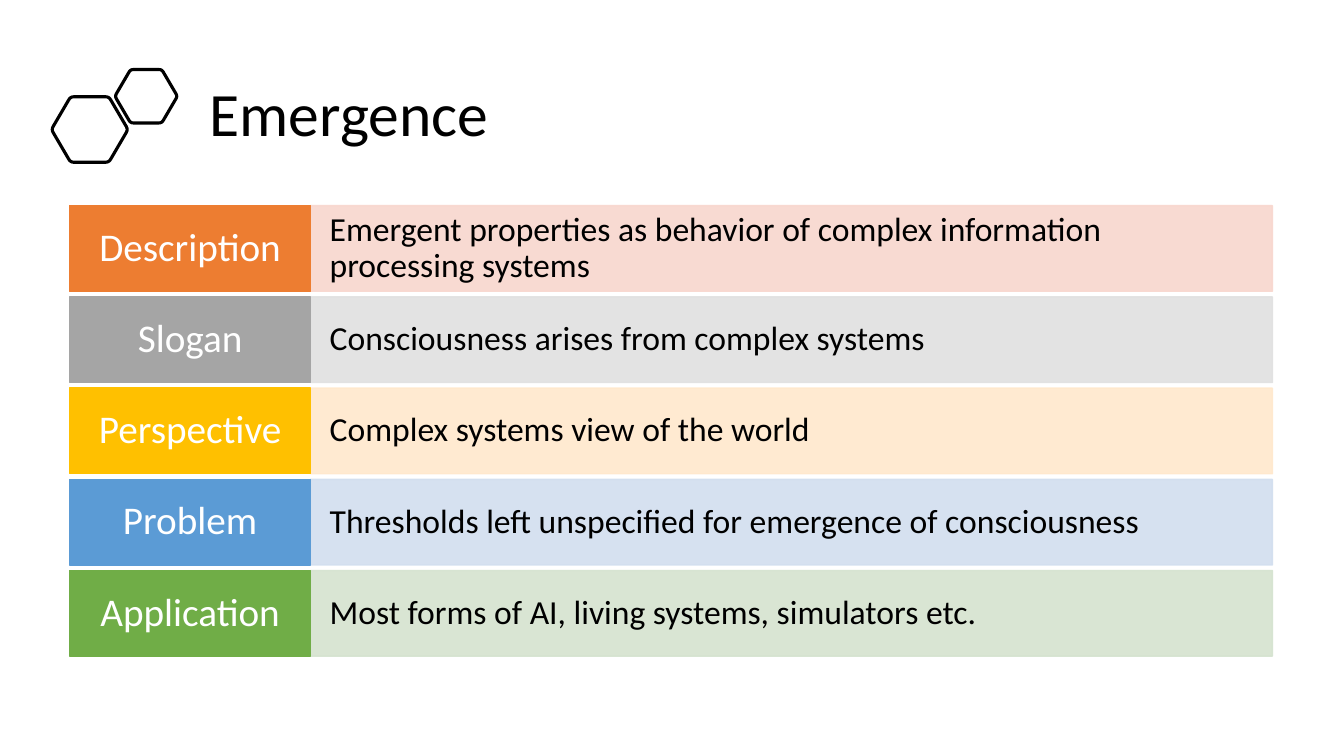
import lxml.etree
import pptx
import pptx.dml.color
import pptx.enum.shapes
import pptx.enum.text
import pptx.oxml.ns
import pptx.util

Inches = pptx.util.Inches
FONT = "Calibri"
CORNER_SHARE = 0.09
CURVE_STEPS = 4
LABEL_WIDTH = 2.39
ROW_HEIGHT = 0.85

ASPECTS = [
    ("Description",
     "Emergent properties as behavior of complex information processing systems",
     "ED7D31", "F8D7CE"),
    ("Slogan", "Consciousness arises from complex systems", "A5A5A5", "E1E1E1"),
    ("Perspective", "Complex systems view of the world", "FFC000", "FFE8CC"),
    ("Problem", "Thresholds left unspecified for emergence of consciousness",
     "5B9BD5", "D2DEEF"),
    ("Application", "Most forms of AI, living systems, simulators etc.",
     "70AD47", "D5E3CF"),
]


def rgb(hex_color):
    return pptx.dml.color.RGBColor.from_string(hex_color)


def set_opacity(shape, percent):
    """Give every solid colour of the shape's fill and line this opacity."""
    tag = pptx.oxml.ns.qn("a:srgbClr")
    for color in shape.fill._xPr.iter(tag):
        alpha = lxml.etree.SubElement(color, pptx.oxml.ns.qn("a:alpha"))
        alpha.set("val", str(percent * 1000))


def write_text(shape, text, size, color, align, side_inset):
    frame = shape.text_frame
    frame.word_wrap = True
    frame.auto_size = pptx.enum.text.MSO_AUTO_SIZE.NONE
    frame.vertical_anchor = pptx.enum.text.MSO_ANCHOR.MIDDLE
    frame.margin_left = frame.margin_right = Inches(side_inset)
    frame.margin_top = frame.margin_bottom = Inches(0.08)
    frame.text = text
    paragraph = frame.paragraphs[0]
    paragraph.alignment = align
    paragraph.line_spacing = 0.9
    paragraph.font.name = FONT
    paragraph.font.size = pptx.util.Pt(size)
    paragraph.font.color.rgb = rgb(color)


def place_title(slide, left, top, width, height):
    title = slide.shapes.title
    title.left, title.top = Inches(left), Inches(top)
    title.width, title.height = Inches(width), Inches(height)
    write_text(title, "Emergence", 44, "000000",
               pptx.enum.text.PP_ALIGN.LEFT, 0.1)


def rounded_outline(corners):
    """Return the points of a polygon whose corners are replaced by curves."""
    points = []
    for i, corner in enumerate(corners):
        before, after = corners[i - 1], corners[(i + 1) % len(corners)]
        start, end = (
            [c + (n - c) * CORNER_SHARE for c, n in zip(corner, neighbour)]
            for neighbour in (before, after))
        for step in range(CURVE_STEPS + 1):
            t = step / CURVE_STEPS
            points.append(tuple(
                Inches((1 - t) ** 2 * s + 2 * t * (1 - t) * c + t ** 2 * e)
                for s, c, e in zip(start, corner, end)))
    return points


def draw_hexagon(slide, left, top, width, height):
    right, bottom, middle = left + width, top + height, top + height / 2
    quarter = width / 4
    outline = rounded_outline([
        (left, middle), (left + quarter, top), (right - quarter, top),
        (right, middle), (right - quarter, bottom), (left + quarter, bottom)])
    builder = slide.shapes.build_freeform(*outline[0])
    builder.add_line_segments(outline[1:], close=True)
    hexagon = builder.convert_to_shape()
    hexagon.shadow.inherit = False
    hexagon.fill.background()
    hexagon.line.color.rgb = rgb("000000")
    hexagon.line.width = pptx.util.Pt(2.25)


def draw_cell(slide, left, top, width, height, color):
    cell = slide.shapes.add_shape(
        pptx.enum.shapes.MSO_SHAPE.RECTANGLE,
        Inches(left), Inches(top), Inches(width), Inches(height))
    cell.shadow.inherit = False
    cell.fill.solid()
    cell.fill.fore_color.rgb = rgb(color)
    cell.line.color.rgb = rgb(color)
    cell.line.width = pptx.util.Pt(1)
    return cell


def draw_aspects(slide, left, top, width, height):
    pitch = (height - ROW_HEIGHT) / (len(ASPECTS) - 1)
    for row, (label, detail, strong, pale) in enumerate(ASPECTS):
        row_top = top + row * pitch
        detail_cell = draw_cell(slide, left + LABEL_WIDTH, row_top,
                                width - LABEL_WIDTH, ROW_HEIGHT, pale)
        set_opacity(detail_cell, 90)
        write_text(detail_cell, detail, 24, "000000",
                   pptx.enum.text.PP_ALIGN.LEFT, 0.19)
        label_cell = draw_cell(slide, left, row_top,
                               LABEL_WIDTH, ROW_HEIGHT, strong)
        write_text(label_cell, label, 28, "FFFFFF",
                   pptx.enum.text.PP_ALIGN.CENTER, 0.13)


def main():
    deck = pptx.Presentation()
    deck.slide_width, deck.slide_height = Inches(13.33), Inches(7.5)
    slide = deck.slides.add_slide(deck.slide_layouts[5])
    place_title(slide, 1.98, 0.57, 10.81, 1.17)
    draw_hexagon(slide, 0.51, 0.96, 0.76, 0.65)
    draw_hexagon(slide, 1.14, 0.69, 0.62, 0.53)
    draw_aspects(slide, 0.69, 2.04, 11.93, 4.47)
    deck.save("out.pptx")


if __name__ == "__main__":
    main()
